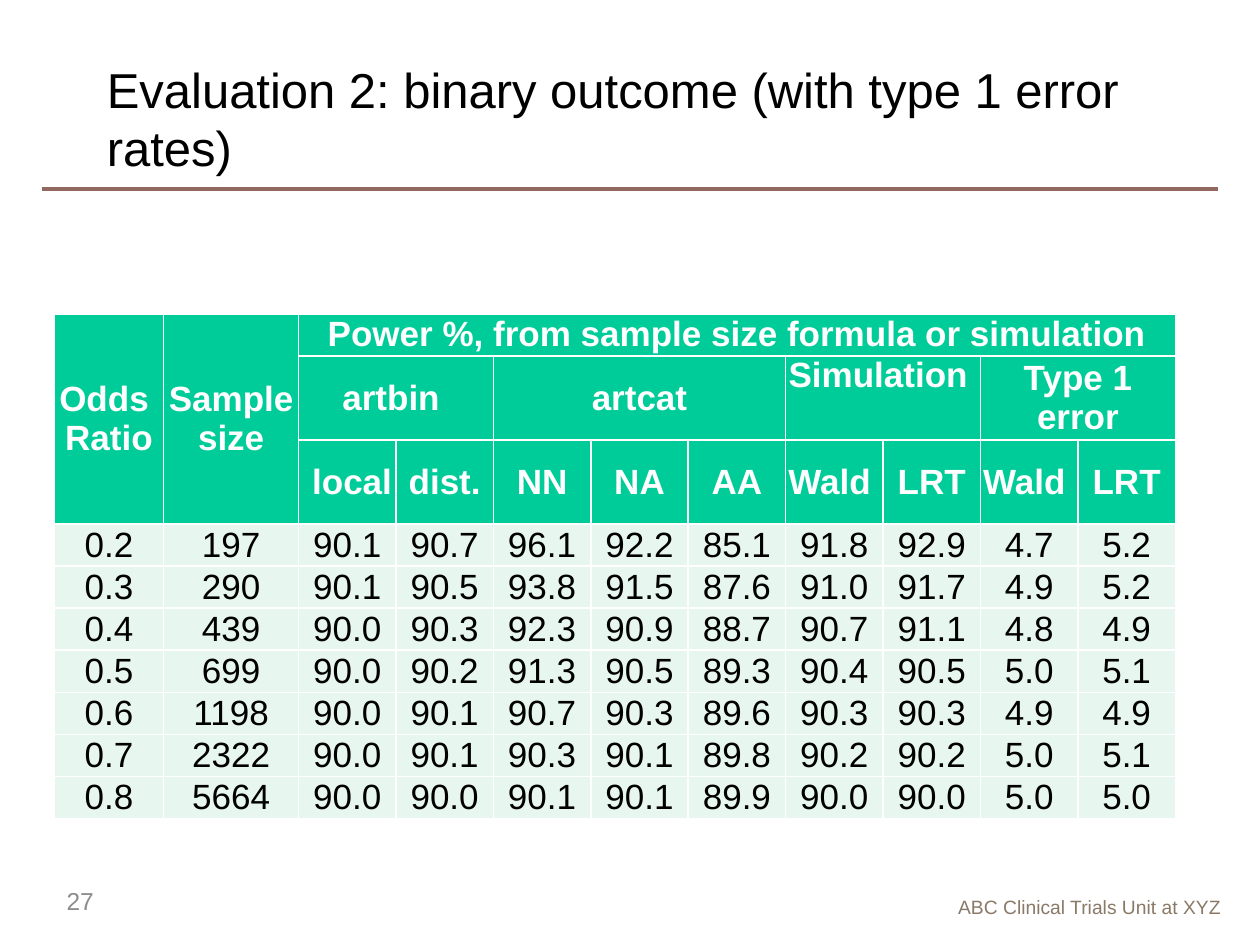
import dataclasses

import pptx
import pptx.dml.color
import pptx.enum.shapes
import pptx.enum.text
import pptx.oxml
import pptx.oxml.ns
import pptx.util

Inches, Pt = pptx.util.Inches, pptx.util.Pt
RGBColor = pptx.dml.color.RGBColor
Align, Anchor = pptx.enum.text.PP_ALIGN, pptx.enum.text.MSO_ANCHOR

WIDTH, HEIGHT = Inches(10), Inches(7.5)
FONT = "Arial"
BLACK = RGBColor(0x00, 0x00, 0x00)
WHITE = RGBColor(0xFF, 0xFF, 0xFF)
GREEN = RGBColor(0x00, 0xCC, 0x99)
MINT = RGBColor(0xE7, 0xF6, 0xEF)
BROWN = RGBColor(0x91, 0x69, 0x5F)
TAUPE = RGBColor(0x8A, 0x79, 0x67)
GREY = RGBColor(0x8C, 0x8C, 0x8C)


@dataclasses.dataclass(frozen=True)
class Label:
    """Text in a box given in inches: left, top, width, height."""
    text: str
    box: tuple[float, float, float, float]
    size: int
    color: RGBColor
    align: Align = Align.LEFT
    anchor: Anchor = Anchor.MIDDLE


@dataclasses.dataclass(frozen=True)
class Heading:
    """Header cell placed on the table grid."""
    text: str
    row: int
    column: int
    rows: int = 1
    columns: int = 1
    anchor: Anchor = Anchor.MIDDLE


LABELS = [
    Label("ABC Clinical Trials Unit at XYZ", (6.46, 7.06, 3.33, 0.29), 11, TAUPE,
          Align.RIGHT, Anchor.TOP),
    Label("Evaluation 2: binary outcome (with type 1 error rates)",
          (0.75, 0.49, 8.56, 0.89), 28, BLACK),
    Label("27", (0.43, 6.95, 2.25, 0.4), 14, GREY),
]
COLUMN_WIDTHS = [0.87, 1.07] + [6.96 / 9] * 9
# Rows lower than their text grow to fit it; only the last header row is taller.
HEADER_HEIGHTS = [0.21, 0.21, 0.63]
DATA_HEIGHT = 0.21
METHODS = [" local", "dist.", "NN", "NA", "AA", "Wald ", "LRT", "Wald ", "LRT"]
HEADINGS = [
    Heading("Odds \nRatio", 0, 0, rows=3),
    Heading("Sample\nsize", 0, 1, rows=3),
    Heading("Power %, from sample size formula or simulation", 0, 2, columns=9),
    Heading("artbin ", 1, 2, columns=2),
    Heading("artcat", 1, 4, columns=3),
    Heading("Simulation ", 1, 7, columns=2, anchor=Anchor.TOP),
    Heading("Type 1 error", 1, 9, columns=2),
    *(Heading(method, 2, column) for column, method in enumerate(METHODS, 2)),
]
RESULTS = """
0.2 197 90.1 90.7 96.1 92.2 85.1 91.8 92.9 4.7 5.2
0.3 290 90.1 90.5 93.8 91.5 87.6 91.0 91.7 4.9 5.2
0.4 439 90.0 90.3 92.3 90.9 88.7 90.7 91.1 4.8 4.9
0.5 699 90.0 90.2 91.3 90.5 89.3 90.4 90.5 5.0 5.1
0.6 1198 90.0 90.1 90.7 90.3 89.6 90.3 90.3 4.9 4.9
0.7 2322 90.0 90.1 90.3 90.1 89.8 90.2 90.2 5.0 5.1
0.8 5664 90.0 90.0 90.1 90.1 89.9 90.0 90.0 5.0 5.0
"""


def style_paragraphs(frame, size: int, color: RGBColor, align: Align, bold: bool = False) -> None:
    for paragraph in frame.paragraphs:
        paragraph.alignment = align
        font = paragraph.font
        font.name, font.size, font.bold = FONT, Pt(size), bold
        font.color.rgb = color


def add_label(slide, label: Label) -> None:
    shape = slide.shapes.add_textbox(*map(Inches, label.box))
    frame = shape.text_frame
    frame.word_wrap = True
    frame.vertical_anchor = label.anchor
    frame.text = label.text
    style_paragraphs(frame, label.size, label.color, label.align)


def add_rule(slide) -> None:
    """Draw the line under the title."""
    line = slide.shapes.add_connector(
        pptx.enum.shapes.MSO_CONNECTOR.STRAIGHT,
        Inches(0.33), int(HEIGHT * 0.2), Inches(9.67), int(HEIGHT * 0.2))
    line.line.color.rgb = BROWN
    line.line.width = Pt(1.75)
    line._element.spPr.append(pptx.oxml.parse_xml(
        f'<a:effectLst {pptx.oxml.ns.nsdecls("a")}/>'))


def format_cell(cell, fill: RGBColor) -> None:
    """Set white borders, narrow margins and the fill."""
    properties = cell._tc.get_or_add_tcPr()
    for side in "LRTB":
        properties.append(pptx.oxml.parse_xml(
            f'<a:ln{side} {pptx.oxml.ns.nsdecls("a")} w="{Pt(1)}">'
            f'<a:solidFill><a:srgbClr val="{WHITE}"/></a:solidFill></a:ln{side}>'))
    cell.margin_left = cell.margin_right = Inches(0.01)
    cell.margin_top = cell.margin_bottom = 0
    cell.vertical_anchor = Anchor.MIDDLE
    cell.fill.solid()
    cell.fill.fore_color.rgb = fill


def write_cell(cell, text: str, color: RGBColor, bold: bool) -> None:
    cell.text_frame.text = text
    style_paragraphs(cell.text_frame, 20, color, Align.CENTER, bold)


def add_results_table(slide) -> None:
    results = [line.split() for line in RESULTS.strip().splitlines()]
    heights = HEADER_HEIGHTS + [DATA_HEIGHT] * len(results)
    table = slide.shapes.add_table(
        len(heights), len(COLUMN_WIDTHS), Inches(0.43), Inches(2.49),
        Inches(sum(COLUMN_WIDTHS)), Inches(sum(heights))).table
    for column, width in zip(table.columns, COLUMN_WIDTHS):
        column.width = Inches(width)
    header_rows = len(HEADER_HEIGHTS)
    for row, height in enumerate(heights):
        table.rows[row].height = Inches(height)
        for column in range(len(COLUMN_WIDTHS)):
            cell = table.cell(row, column)
            is_header = row < header_rows
            format_cell(cell, GREEN if is_header else MINT)
            if not is_header:
                write_cell(cell, results[row - header_rows][column], BLACK, False)
    for heading in HEADINGS:
        cell = table.cell(heading.row, heading.column)
        if heading.rows > 1 or heading.columns > 1:
            cell.merge(table.cell(heading.row + heading.rows - 1,
                                  heading.column + heading.columns - 1))
        cell.vertical_anchor = heading.anchor
        write_cell(cell, heading.text, WHITE, True)


def main() -> None:
    presentation = pptx.Presentation()
    presentation.slide_width, presentation.slide_height = WIDTH, HEIGHT
    slide = presentation.slides.add_slide(presentation.slide_layouts[6])
    add_rule(slide)
    for label in LABELS:
        add_label(slide, label)
    add_results_table(slide)
    presentation.save("out.pptx")


if __name__ == "__main__":
    main()
